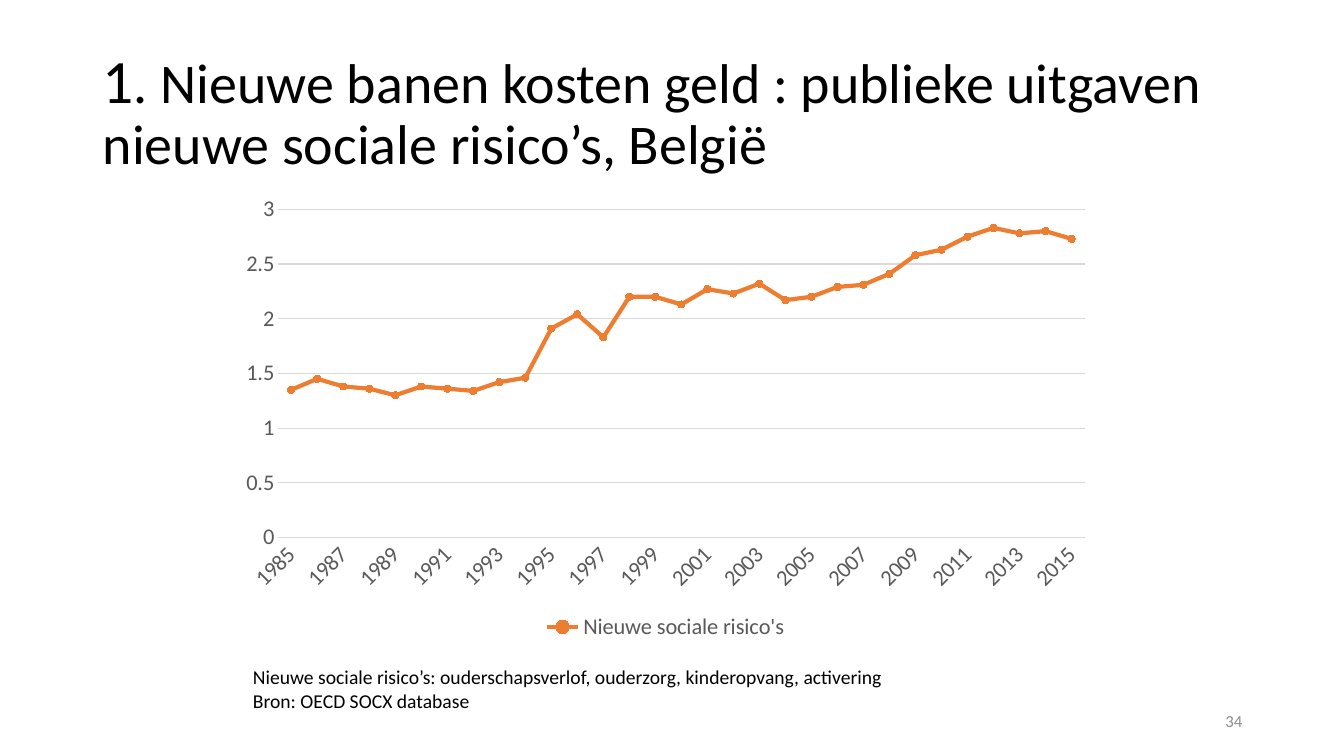
"""Build the slide on public spending for new social risks in Belgium."""
import pptx
import pptx.chart.data
import pptx.dml.color
import pptx.enum.chart
import pptx.enum.text
import pptx.oxml
import pptx.util

Inches = pptx.util.Inches
Pt = pptx.util.Pt
RGB = pptx.dml.color.RGBColor
Anchor = pptx.enum.text.MSO_ANCHOR
Align = pptx.enum.text.PP_ALIGN
Chart = pptx.enum.chart

FONT = "Calibri"
BLACK = RGB(0x00, 0x00, 0x00)
GREY = RGB(0x59, 0x59, 0x59)
PALE = RGB(0x8C, 0x8C, 0x8C)
RULE = RGB(0xD9, 0xD9, 0xD9)
ORANGE = RGB(0xED, 0x7D, 0x31)

TITLE = [
    ("1", 44),
    (". Nieuwe banen kosten geld : publieke uitgaven nieuwe sociale risico’s, België", 40),
]
NOTES = [
    "Nieuwe sociale risico’s: ouderschapsverlof, ouderzorg, kinderopvang, activering",
    "Bron: OECD SOCX database",
]
NUMBER = "34"
SERIES = "Nieuwe sociale risico's"
START = 1985
VALUES = [
    1.35, 1.45, 1.38, 1.36, 1.3, 1.38, 1.36, 1.34, 1.42, 1.46, 1.91,
    2.04, 1.83, 2.2, 2.2, 2.13, 2.27, 2.23, 2.32, 2.17, 2.2, 2.29,
    2.31, 2.41, 2.58, 2.63, 2.75, 2.83, 2.78, 2.8, 2.73,
]


def style(font, size, color):
    font.name = FONT
    font.size = Pt(size)
    font.color.rgb = color


def add_text(slide, place, lines, color, anchor=Anchor.TOP, align=Align.LEFT):
    frame = slide.shapes.add_textbox(*map(Inches, place)).text_frame
    frame.word_wrap = True
    frame.vertical_anchor = anchor
    for index, line in enumerate(lines):
        para = frame.add_paragraph() if index else frame.paragraphs[0]
        para.alignment = align
        for words, size in line:
            run = para.add_run()
            run.text = words
            style(run.font, size, color)
    return frame


def add_graph(slide, place):
    data = pptx.chart.data.CategoryChartData()
    data.categories = [str(START + step) for step in range(len(VALUES))]
    data.add_series(SERIES, VALUES)
    kind = Chart.XL_CHART_TYPE.LINE_MARKERS
    chart = slide.shapes.add_chart(kind, *map(Inches, place), data).chart
    style(chart.font, 16, BLACK)
    chart.has_title = False
    chart.has_legend = True
    chart.legend.position = Chart.XL_LEGEND_POSITION.BOTTOM
    chart.legend.include_in_layout = False
    style(chart.legend.font, 16, GREY)

    years, scale = chart.category_axis, chart.value_axis
    for axis in (years, scale):
        style(axis.tick_labels.font, 16, GREY)
        axis.major_tick_mark = Chart.XL_TICK_MARK.NONE
        axis.minor_tick_mark = Chart.XL_TICK_MARK.NONE
    scale.minimum_scale, scale.maximum_scale, scale.major_unit = 0, 3, 0.5
    scale.format.line.fill.background()
    for line in (years.format.line, scale.major_gridlines.format.line):
        line.color.rgb = RULE
        line.width = Pt(0.75)

    plot = chart.plots[0]
    plot.vary_by_categories = False
    risk = plot.series[0]
    risk.smooth = False
    risk.format.line.color.rgb = ORANGE
    risk.format.line.width = Pt(3)
    mark = risk.marker
    mark.style = Chart.XL_MARKER_STYLE.CIRCLE
    mark.size = 5
    mark.format.fill.solid()
    mark.format.fill.fore_color.rgb = ORANGE
    mark.format.line.color.rgb = ORANGE


def main():
    deck = pptx.Presentation()
    deck.slide_width, deck.slide_height = Inches(13.33), Inches(7.5)
    slide = deck.slides.add_slide(deck.slide_layouts[6])
    title = add_text(slide, (0.92, 0.4, 12.31, 1.45), [TITLE], BLACK, Anchor.MIDDLE)
    title.paragraphs[0].line_spacing = 0.9
    add_text(slide, (9.42, 6.95, 3, 0.4), [[(NUMBER, 12)]], PALE, Anchor.MIDDLE, Align.RIGHT)
    add_text(slide, (2.41, 6.55, 9.06, 0.81), [[(note, 14)] for note in NOTES], BLACK)
    add_graph(slide, (2.27, 1.85, 8.66, 4.55))
    deck.save("out.pptx")


if __name__ == "__main__":
    main()
